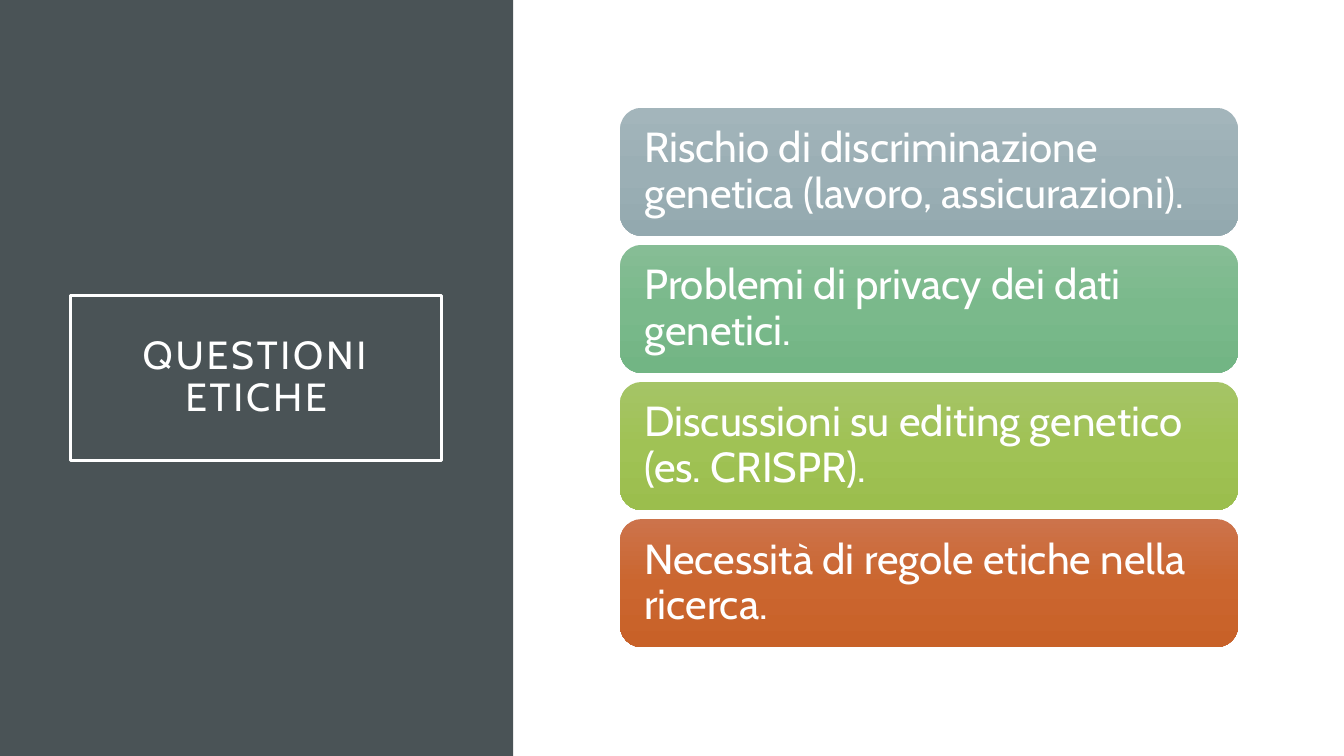
from copy import deepcopy

from pptx import Presentation
from pptx.dml.color import RGBColor
from pptx.enum.shapes import MSO_SHAPE
from pptx.enum.text import MSO_ANCHOR, MSO_AUTO_SIZE, PP_ALIGN
from pptx.util import Inches, Pt

RECT = MSO_SHAPE.RECTANGLE
ROUNDED = MSO_SHAPE.ROUNDED_RECTANGLE
MIDDLE = MSO_ANCHOR.MIDDLE
LEFT, CENTER = PP_ALIGN.LEFT, PP_ALIGN.CENTER
NO_FIT = MSO_AUTO_SIZE.NONE

THEME = {
    "font": "Cabin",
    "title_size": 28,
    "card_size": 30,
    "text": "FFFFFF",
    "panel": "4A5356",
}

# Each card: text and its gradient from top to bottom
CARDS = [
    ("Rischio di discriminazione genetica (lavoro, assicurazioni).",
     ("A3B5BB", "9BAFB5", "93A9AF")),
    ("Problemi di privacy dei dati genetici.",
     ("86BD95", "7AB98B", "72B584")),
    ("Discussioni su editing genetico (es. CRISPR).",
     ("A5C466", "A0C255", "9BBE4D")),
    ("Necessità di regole etiche nella ricerca.",
     ("CC734B", "CB662F", "C86128")),
]
CARD_LEFT, CARD_TOP = 6.15, 1.07
CARD_W, CARD_H = 6.13, 1.27
CARD_PITCH = 1.36


def set_text(sp, text, size, inset, align):
    """Write one paragraph, centred vertically, and return its run."""
    tf = sp.text_frame
    tf.text = text
    tf.word_wrap = True
    tf.auto_size = NO_FIT
    tf.vertical_anchor = MIDDLE
    tf.margin_left = tf.margin_right = Inches(inset)
    tf.margin_top = tf.margin_bottom = Inches(inset)
    p = tf.paragraphs[0]
    p.alignment = align
    p.line_spacing = 0.9
    r = p.runs[0]
    r.font.name = THEME["font"]
    r.font.size = Pt(size)
    r.font.color.rgb = RGBColor.from_string(THEME["text"])
    return r


prs = Presentation()
prs.slide_width, prs.slide_height = Inches(13.33), Inches(7.5)
s = prs.slides.add_slide(prs.slide_layouts[5])

# Dark side panel, behind the title
panel = s.shapes.add_shape(RECT, 0, 0, Inches(5.09), prs.slide_height)
panel.shadow.inherit = False
panel.fill.solid()
panel.fill.fore_color.rgb = RGBColor.from_string(THEME["panel"])
panel.line.fill.background()
s.shapes._spTree.insert(2, panel._element)

# Framed title
title = s.shapes.title
title.left, title.top = Inches(0.7), Inches(2.93)
title.width, title.height = Inches(3.68), Inches(1.64)
title.line.color.rgb = RGBColor.from_string(THEME["text"])
title.line.width = Pt(2.5)
r = set_text(title, "QUESTIONI ETICHE", THEME["title_size"], 0.2, CENTER)
r.font._element.set("spc", "200")

# Stack of cards
for row, (text, colors) in enumerate(CARDS):
    card = s.shapes.add_shape(
        ROUNDED, Inches(CARD_LEFT), Inches(CARD_TOP + row * CARD_PITCH),
        Inches(CARD_W), Inches(CARD_H))
    card.shadow.inherit = False
    card.line.fill.background()

    # Three-stop gradient, running downwards
    card.fill.gradient()
    card.fill.gradient_angle = 270
    first = card.fill.gradient_stops[0]._gs
    first.addnext(deepcopy(first))
    for i, (stop, color) in enumerate(zip(card.fill.gradient_stops, colors)):
        stop.position = i / 2
        stop.color.rgb = RGBColor.from_string(color)

    set_text(card, text, THEME["card_size"], 0.18, LEFT)

prs.save("out.pptx")
